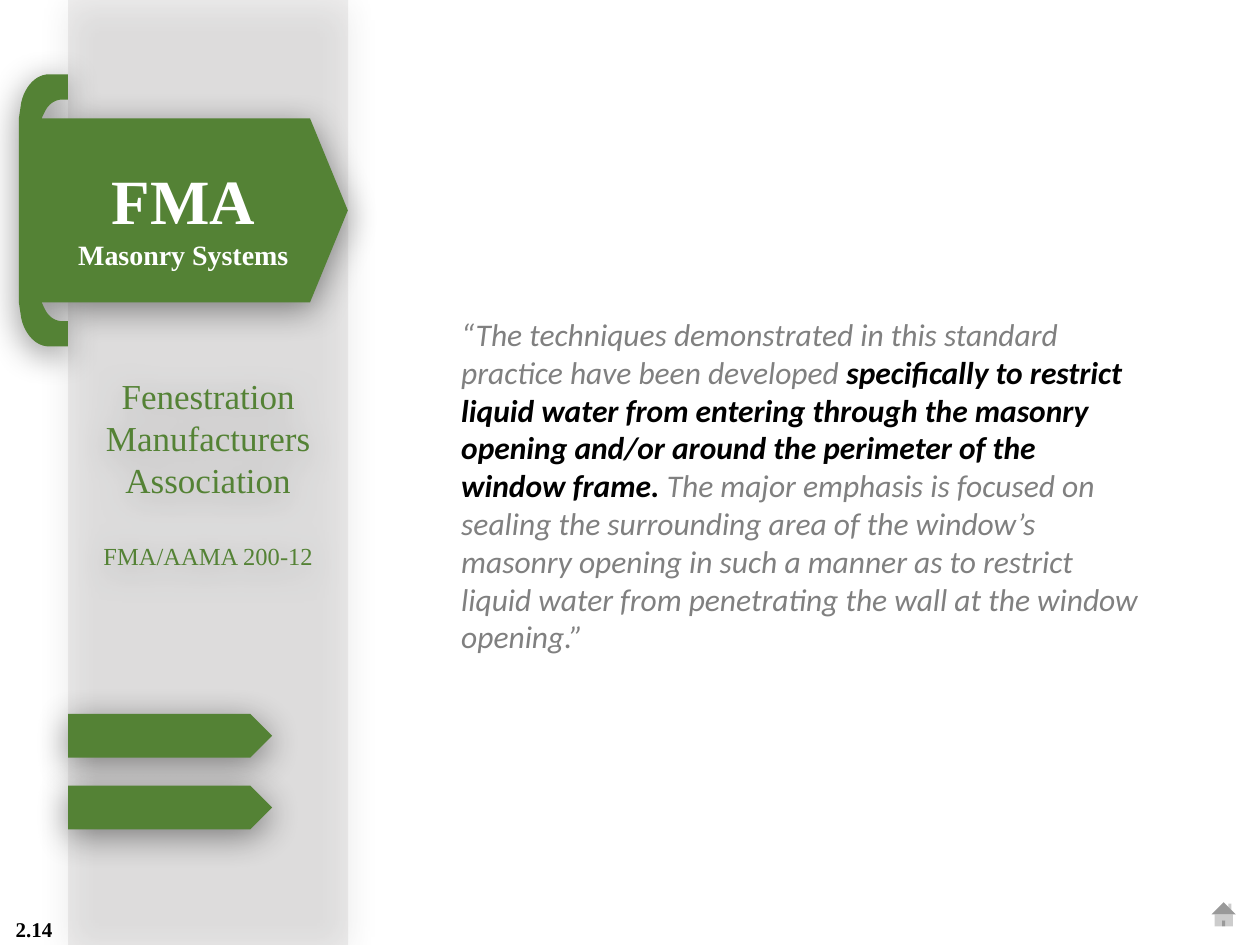
from dataclasses import dataclass

from lxml import etree
from pptx import Presentation
from pptx import util as u
from pptx.dml.color import RGBColor
from pptx.enum import shapes, text
from pptx.oxml import ns

Pt = u.Pt
SHAPE = shapes.MSO_SHAPE
MIDDLE = text.MSO_ANCHOR.MIDDLE
CENTER = text.PP_ALIGN.CENTER


@dataclass(frozen=True)
class Theme:
    green: str = "548235"
    panel: str = "AFABAB"
    quote: str = "808080"
    black: str = "000000"
    white: str = "FFFFFF"
    serif: str = "Times New Roman"
    sans: str = "Calibri"
    title: int = 36
    association: int = 20
    body: int = 18
    subtitle: int = 16
    standard: int = 14
    number: int = 12


THEME = Theme()


def set_all(target, values):
    for key, value in values.items():
        setattr(target, key, value)


def add_child(parent, tag, **attributes):
    return etree.SubElement(parent, ns.qn(tag), **attributes)


def paint(shape, color, opacity=None, shadow=True):
    shape.fill.solid()
    shape.fill.fore_color.rgb = RGBColor.from_string(color)
    shape.line.fill.background()
    shape.shadow.inherit = False
    properties = shape._element.spPr
    if opacity is not None:
        fill_color = properties.find(ns.qn("a:solidFill"))[0]
        add_child(fill_color, "a:alpha", val=str(opacity * 1000))
    if shadow:
        effects = properties.find(ns.qn("a:effectLst"))
        outer = add_child(effects, "a:outerShdw", blurRad=str(Pt(20)),
                          dist=str(Pt(4)), dir="5400000", algn="ctr", rotWithShape="0")
        shade = add_child(outer, "a:srgbClr", val=THEME.black)
        add_child(shade, "a:alpha", val="43000")


def write(frame, paragraphs, align=None, **frame_format):
    """Each paragraph is a list of (words, colour, font format) runs."""
    set_all(frame, {"word_wrap": True, **frame_format})
    for index, runs in enumerate(paragraphs):
        paragraph = frame.add_paragraph() if index else frame.paragraphs[0]
        paragraph.alignment = align
        for words, color, font_format in runs:
            run = paragraph.add_run()
            run.text = words
            set_all(run.font, font_format)
            run.font.color.rgb = RGBColor.from_string(color)


def add_preset(slide, kind, box):
    return slide.shapes.add_shape(kind, *map(Pt, box))


def bezier(start, control_1, control_2, end, steps=12):
    for step in range(1, steps + 1):
        t = step / steps
        weights = ((1 - t) ** 3, 3 * t * (1 - t) ** 2, 3 * t * t * (1 - t), t ** 3)
        corners = (start, control_1, control_2, end)
        yield tuple(sum(w * p[axis] for w, p in zip(weights, corners)) for axis in (0, 1))


def add_sidebar(slide, box):
    # Grey panel with the association name
    panel = add_preset(slide, SHAPE.RECTANGLE, box)
    paint(panel, THEME.panel, opacity=20)
    font = {"name": THEME.serif}
    write(panel.text_frame, [
        [("Fenestration Manufacturers Association", THEME.green,
          {**font, "size": Pt(THEME.association)})],
        [("FMA/AAMA 200-12", THEME.green, {**font, "size": Pt(THEME.standard)})],
    ], CENTER, vertical_anchor=MIDDLE)
    panel.text_frame.paragraphs[1].space_before = Pt(23)

    # Two arrow tabs on the panel's left edge
    left, top = box[:2]
    for row in range(2):
        tab = add_preset(slide, SHAPE.PENTAGON, (left, top + 408 + 41 * row, 116.5, 25))
        paint(tab, THEME.green)


def add_quote(slide, box):
    quote = slide.shapes.add_textbox(*map(Pt, box))
    font = {"name": THEME.sans, "size": Pt(THEME.body), "italic": True}
    write(quote.text_frame, [[
        ("“The techniques demonstrated in this standard practice have been developed ",
         THEME.quote, font),
        ("specifically to restrict liquid water from entering through the masonry "
         "opening and/or around the perimeter of the window frame. ",
         THEME.black, {**font, "bold": True}),
        ("The major emphasis is focused on sealing the surrounding area of the window’s "
         "masonry opening in such a manner as to restrict liquid water from penetrating "
         "the wall at the window opening.”", THEME.quote, font),
    ]])


def add_banner(slide, box):
    # Upper half of the ribbon; the lower half mirrors it
    left, top, width, height = box
    upper = [(0, 25.2), (1.4, 16),
             *bezier((1.4, 16), (3.6, 6.5), (10, 0), (17.3, 0)),
             (28, 0), (28, 14.4), (25.2, 14.4),
             *bezier((25.2, 14.4), (21, 14.4), (17.3, 16.6), (15.1, 20.9)),
             (13, 25.2), (width - 21.6, 25.2)]
    lower = [(x, height - y) for x, y in reversed(upper)]
    outline = [(Pt(left + x), Pt(top + y))
               for x, y in [*upper, (width, height / 2), *lower]]
    builder = slide.shapes.build_freeform(*outline[0])
    builder.add_line_segments(outline[1:], close=True)
    banner = builder.convert_to_shape()
    paint(banner, THEME.green)
    font = {"name": THEME.serif, "bold": True}
    write(banner.text_frame, [
        [("FMA", THEME.white, {**font, "size": Pt(THEME.title)})],
        [("Masonry Systems", THEME.white, {**font, "size": Pt(THEME.subtitle)})],
    ], CENTER, vertical_anchor=MIDDLE, margin_top=Pt(10.5))


def add_footer(slide, box):
    # Page number at the left, home button at the right
    left, top, width, height = box
    number = slide.shapes.add_textbox(*map(Pt, (left, top + 11, 39, height - 11)))
    write(number.text_frame, [[("2.14", THEME.black, {
        "name": THEME.serif, "size": Pt(THEME.number), "bold": True})]],
        CENTER, vertical_anchor=MIDDLE, margin_left=0, margin_right=0)
    home = add_preset(slide, SHAPE.ACTION_BUTTON_HOME, (left + width - 30, top, 18.5, 23))
    paint(home, THEME.white, shadow=False)


def main():
    deck = Presentation()
    set_all(deck, {"slide_width": Pt(720), "slide_height": Pt(540)})
    slide = deck.slides.add_slide(deck.slide_layouts[6])
    add_sidebar(slide, (39, 0, 160, 540))
    add_quote(slide, (256.5, 176.5, 404.5, 204))
    add_banner(slide, (10.8, 42.5, 188, 155.5))
    add_footer(slide, (0, 511, 720, 29))
    deck.save("out.pptx")


if __name__ == "__main__":
    main()
